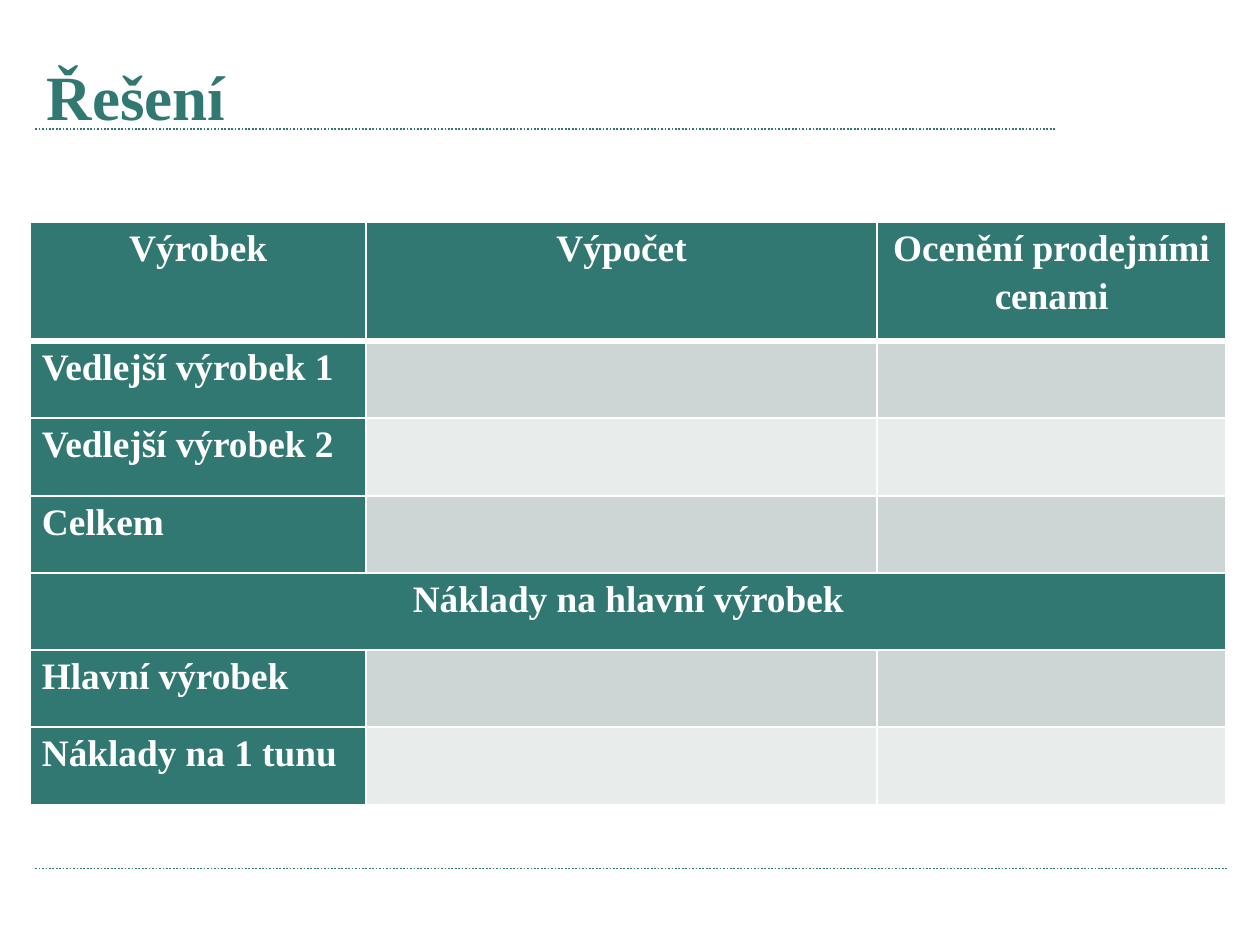
import pptx
import pptx.dml.color
import pptx.enum.dml
import pptx.enum.shapes
import pptx.enum.text
import pptx.oxml
import pptx.oxml.ns
import pptx.util
from pptx.util import Inches

TEAL = pptx.dml.color.RGBColor(0x30, 0x78, 0x71)
WHITE = pptx.dml.color.RGBColor(0xFF, 0xFF, 0xFF)
DARK_BAND = pptx.dml.color.RGBColor(0xCD, 0xD6, 0xD5)
LIGHT_BAND = pptx.dml.color.RGBColor(0xE8, 0xEC, 0xEB)
FONT = "Times New Roman"
ALIGN = pptx.enum.text.PP_ALIGN


def style_font(paragraph, size, color):
    paragraph.font.name = FONT
    paragraph.font.size = pptx.util.Pt(size)
    paragraph.font.bold = True
    paragraph.font.color.rgb = color


def add_borders(cell, widths):
    properties = cell._tc.get_or_add_tcPr()
    for position, (side, width) in enumerate(widths.items()):
        border = pptx.oxml.parse_xml(
            f'<a:{side} {pptx.oxml.ns.nsdecls("a")} w="{pptx.util.Pt(width)}">'
            f'<a:solidFill><a:srgbClr val="{WHITE}"/></a:solidFill></a:{side}>'
        )
        properties.insert(position, border)


presentation = pptx.Presentation()
presentation.slide_width = Inches(7.5)
presentation.slide_height = Inches(7.5 * 3 / 4)
slide = presentation.slides.add_slide(presentation.slide_layouts[6])

for right, y in [(6.29, 0.77), (7.31, 5.17)]:
    rule = slide.shapes.add_connector(
        pptx.enum.shapes.MSO_CONNECTOR.STRAIGHT,
        Inches(0.21), Inches(y), Inches(right), Inches(y),
    )
    rule.line.color.rgb = TEAL
    rule.line.width = pptx.util.Pt(0.75)
    rule.line.dash_style = pptx.enum.dml.MSO_LINE.ROUND_DOT
    rule._element.spPr.append(pptx.oxml.parse_xml(f'<a:effectLst {pptx.oxml.ns.nsdecls("a")}/>'))

title = slide.shapes.add_textbox(Inches(0.18), Inches(0.27), Inches(6.61), Inches(0.59))
title.text_frame.word_wrap = True
title.text_frame.vertical_anchor = pptx.enum.text.MSO_ANCHOR.MIDDLE
title.text_frame.text = "Řešení"
style_font(title.text_frame.paragraphs[0], 27, TEAL)

headings = ["Výrobek", "Výpočet", "Ocenění prodejními cenami"]
section = "Náklady na hlavní výrobek"
products = ["Vedlejší výrobek 1", "Vedlejší výrobek 2", "Celkem", section, "Hlavní výrobek", "Náklady na 1 tunu"]
rows = [headings] + [[product, "", ""] for product in products]
column_widths = [2, 3.04, 2.08]

table = slide.shapes.add_table(
    len(rows), len(column_widths), Inches(0.18), Inches(1.32), Inches(7.12), Inches(3.47)
).table
for column, width in zip(table.columns, column_widths):
    column.width = Inches(width)

for row_index, texts in enumerate(rows):
    table.rows[row_index].height = Inches(0.46 if row_index else 0.71)
    band = DARK_BAND if row_index % 2 else LIGHT_BAND
    centered = row_index == 0 or texts[0] == section
    for column_index, text in enumerate(texts):
        cell = table.cell(row_index, column_index)
        cell.fill.solid()
        cell.fill.fore_color.rgb = TEAL if centered or column_index == 0 else band
        add_borders(cell, {
            "lnL": 1,
            "lnR": 1,
            "lnT": 3 if row_index == 1 else 1,
            "lnB": 3 if row_index == 0 else 1,
        })
        if text:
            cell.margin_left = cell.margin_right = Inches(0.07)
            cell.margin_top = cell.margin_bottom = 0
            cell.text = text
            paragraph = cell.text_frame.paragraphs[0]
            paragraph.alignment = ALIGN.CENTER if centered else ALIGN.JUSTIFY
            paragraph.line_spacing = 1.15
            style_font(paragraph, 16, WHITE)

section_row = products.index(section) + 1
table.cell(section_row, 0).merge(table.cell(section_row, 2))

presentation.save("out.pptx")
